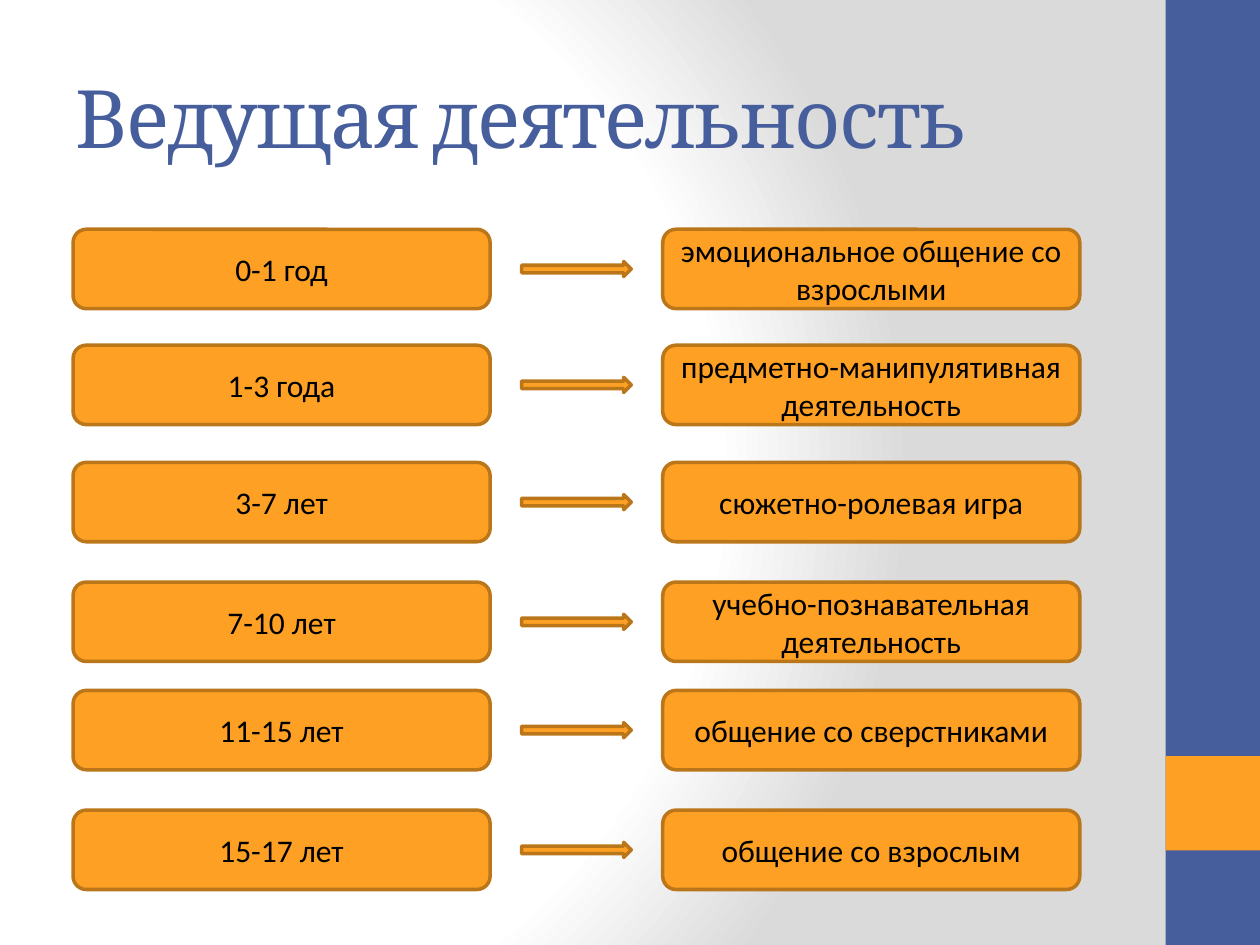
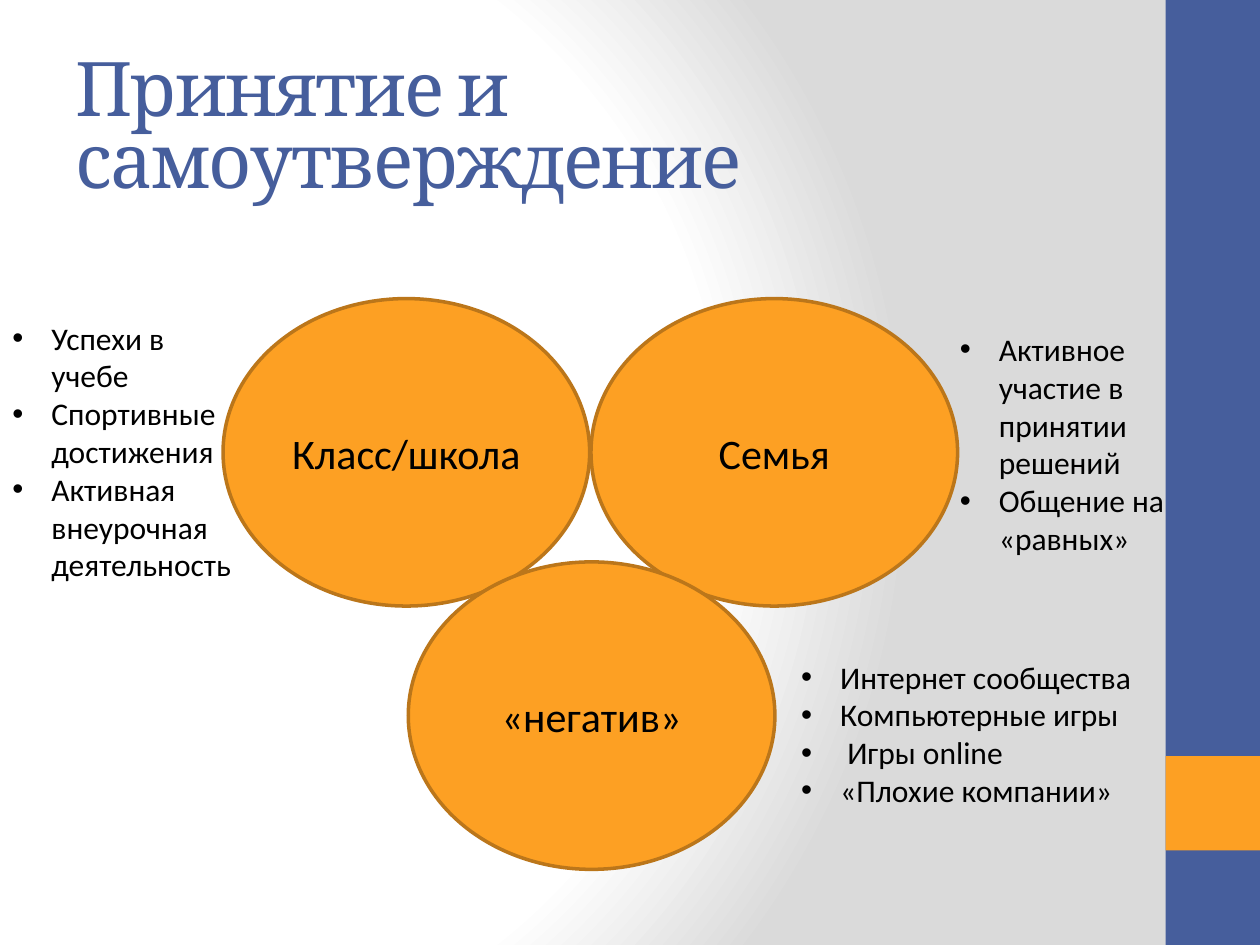
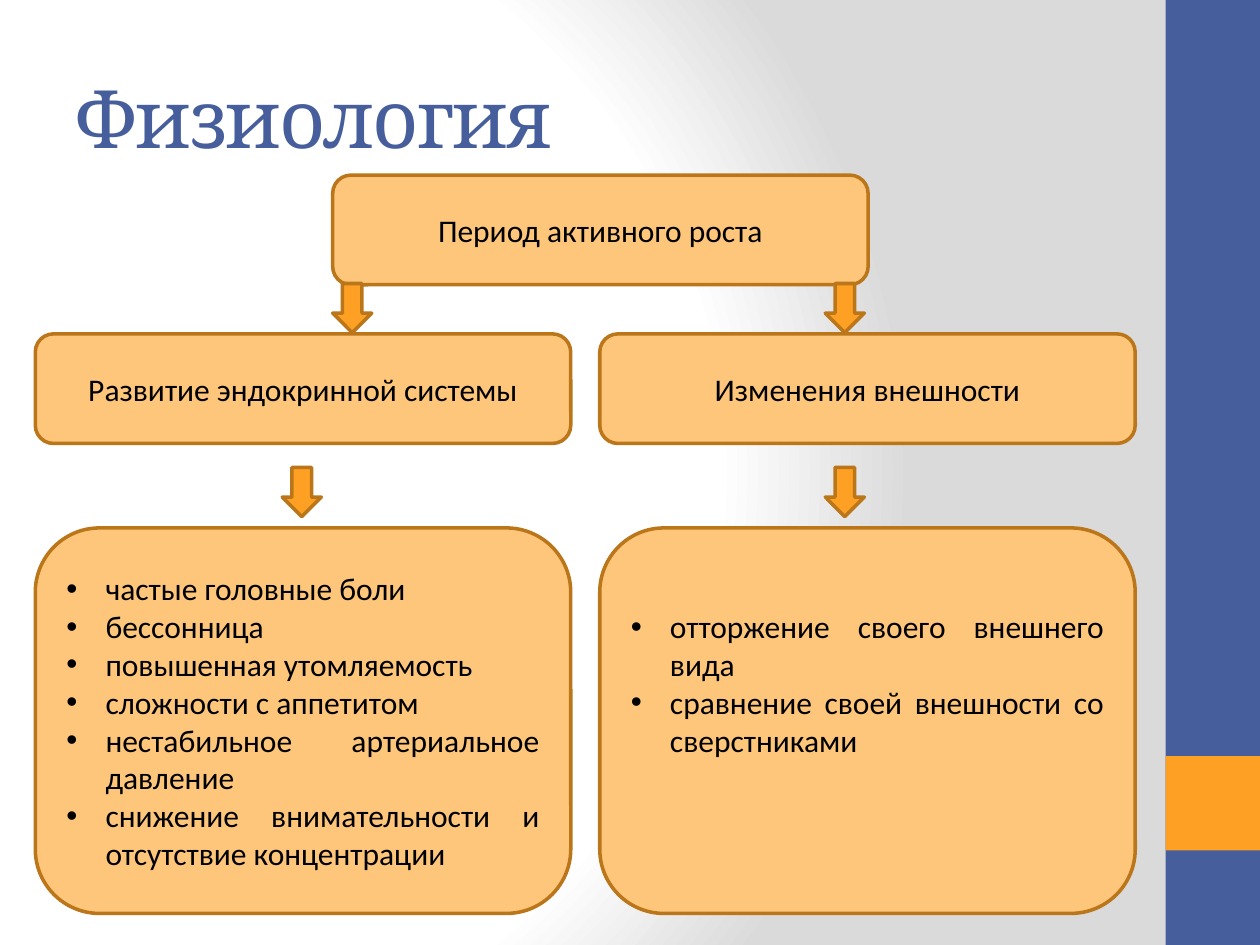
from lxml import etree
from pptx import Presentation
from pptx.dml.color import RGBColor
from pptx.enum.shapes import MSO_SHAPE as SHAPE
from pptx.enum.text import MSO_ANCHOR as ANCHOR, MSO_AUTO_SIZE as FIT, PP_ALIGN as ALIGN
from pptx.oxml import parse_xml
from pptx.oxml.ns import nsdecls, qn
from pptx.util import Inches, Pt

# The grid has square cells of one inch.
COLS, ROWS = 10, 7.5
BLUE, ORANGE, PEACH, BROWN = "465E9C", "FDA023", "FEC67B", "BB761A"
BLACK, WHITE, GREY = "000000", "FFFFFF", "DADADA"
BAND = 0.75
INDENT = 0.31


def color(hex_code):
    return RGBColor.from_string(hex_code)


def cells(*lengths):
    return [Inches(n) for n in lengths]


def set_background(master):
    """Give every slide the white to grey circular gradient."""
    fill = master.background.fill
    fill.solid()
    solid = master.element.find(".//" + qn("p:bgPr")).find(qn("a:solidFill"))
    stops = "".join(
        f'<a:gs pos="{pos * 1000}"><a:srgbClr val="{tone}"/></a:gs>'
        for pos, tone in ((0, WHITE), (75, WHITE), (100, GREY)))
    solid.getparent().replace(solid, parse_xml(
        f'<a:gradFill {nsdecls("a")} rotWithShape="1"><a:gsLst>{stops}</a:gsLst>'
        '<a:path path="circle"><a:fillToRect l="20000" t="50000" r="100000" b="50000"/>'
        '</a:path></a:gradFill>'))


def write(tf, lines, size, font="Calibri", tone=BLACK, align=None, bullets=False):
    tf.word_wrap = True
    tf.text = "\n".join(lines)
    for p in tf.paragraphs:
        p.alignment = align
        if bullets:
            add_bullet(p)
        for r in p.runs:
            r.font.size = Pt(size)
            r.font.name = font
            r.font.color.rgb = color(tone)


def add_bullet(p):
    pPr = p._p.get_or_add_pPr()
    pPr.set("marL", str(Inches(INDENT)))
    pPr.set("indent", str(-Inches(INDENT)))
    etree.SubElement(pPr, qn("a:buFont")).set("typeface", "Arial")
    etree.SubElement(pPr, qn("a:buChar")).set("char", "•")


def add_figure(s, kind, x, y, w, h, fill=ORANGE, line=BROWN):
    sp = s.shapes.add_shape(kind, *cells(x, y, w, h))
    sp.shadow.inherit = False
    sp.fill.solid()
    sp.fill.fore_color.rgb = color(fill)
    if line:
        sp.line.color.rgb = color(line)
        sp.line.width = Pt(2)
    else:
        sp.line.fill.background()
    return sp


def add_label(s, kind, x, y, w, h, text, size=18, fill=ORANGE):
    sp = add_figure(s, kind, x, y, w, h, fill)
    sp.text_frame.vertical_anchor = ANCHOR.MIDDLE
    write(sp.text_frame, [text], size, align=ALIGN.CENTER)


def add_list(s, x, y, w, h, items):
    tf = s.shapes.add_textbox(*cells(x, y, w, h)).text_frame
    write(tf, items, 18, bullets=True)
    tf.auto_size = FIT.SHAPE_TO_FIT_TEXT


def add_list_card(s, x, y, w, h, items, lift=0):
    """Add a rounded card; lift is the room kept free below the list."""
    sp = add_figure(s, SHAPE.ROUNDED_RECTANGLE, x, y, w, h, PEACH)
    tf = sp.text_frame
    tf.vertical_anchor = ANCHOR.MIDDLE
    tf.margin_bottom = Inches(0.05 + lift)
    write(tf, items, 18, align=ALIGN.JUSTIFY, bullets=True)


def add_slide(prs, title):
    s = prs.slides.add_slide(prs.slide_layouts[6])
    add_figure(s, SHAPE.RECTANGLE, COLS - BAND, 0, BAND, ROWS, BLUE, None)
    add_figure(s, SHAPE.RECTANGLE, COLS - BAND, ROWS - 2 * BAND, BAND, BAND, ORANGE, None)
    tf = s.shapes.add_textbox(*cells(0.5, 0.3, 8.33, 1.25)).text_frame
    tf.vertical_anchor = ANCHOR.MIDDLE
    write(tf, [title], 46, "Cambria", BLUE)
    tf.auto_size = FIT.TEXT_TO_FIT_SHAPE
    for r in tf.paragraphs[0].runs:
        r.font._element.set("spc", "-100")
    return s


def leading_activity(prs):
    s = add_slide(prs, "Ведущая деятельность")
    box_w, box_h, arrow_h = 3.31, 0.63, 0.12
    stages = (
        (1.82, "0-1 год", "эмоциональное общение со взрослыми"),
        (2.74, "1-3 года", "предметно-манипулятивная деятельность"),
        (3.67, "3-7 лет", "сюжетно-ролевая игра"),
        (4.62, "7-10 лет", "учебно-познавательная деятельность"),
        (5.48, "11-15 лет", "общение со сверстниками"),
        (6.43, "15-17 лет", "общение со взрослым"),
    )
    for y, age, activity in stages:
        for x, text in ((0.58, age), (5.26, activity)):
            add_label(s, SHAPE.ROUNDED_RECTANGLE, x, y, box_w, box_h, text)
        add_figure(s, SHAPE.RIGHT_ARROW, 4.14, y + (box_h - arrow_h) / 2, 0.87, arrow_h)


def acceptance(prs):
    s = add_slide(prs, "Принятие и самоутверждение")
    for x, y, text in ((1.77, 2.37, "Класс/школа"), (4.69, 2.37, "Семья"),
                       (3.24, 4.46, "«негатив»")):
        add_label(s, SHAPE.OVAL, x, y, 2.91, 2.44, text, 24)
    add_list(s, 0, 2.48, 2.05, 2.22, [
        "Успехи в учебе", "Спортивные достижения", "Активная внеурочная деятельность"])
    add_list(s, 7.52, 2.57, 2.36, 2.22, [
        "Активное участие в принятии решений", "Общение на «равных»"])
    add_list(s, 6.26, 5.17, 2.91, 1.31, [
        "Интернет сообщества", "Компьютерные игры", " Игры online", "«Плохие компании»"])


def physiology(prs):
    s = add_slide(prs, "Физиология")
    card_w, head_h = 4.25, 0.87
    left, right = 0.28, 4.76
    heads = ((2.64, 1.39, "Период активного роста"),
             (left, 2.65, "Развитие эндокринной системы"),
             (right, 2.65, "Изменения внешности"))
    for x, y, text in heads:
        add_label(s, SHAPE.ROUNDED_RECTANGLE, x, y, card_w, head_h, text, fill=PEACH)
    for x, y in ((2.64, 2.25), (6.55, 2.25), (2.24, 3.71), (6.55, 3.71)):
        add_figure(s, SHAPE.DOWN_ARROW, x, y, 0.31, 0.39)
    add_list_card(s, left, 4.19, card_w, 3.06, [
        "частые головные боли", "бессонница", "повышенная утомляемость",
        "сложности с аппетитом", "нестабильное артериальное давление",
        "снижение внимательности и отсутствие концентрации"])
    add_list_card(s, right, 4.19, card_w, 3.06, [
        "отторжение своего внешнего вида",
        "сравнение своей внешности со сверстниками"], lift=0.6)


def main():
    prs = Presentation()
    prs.slide_width, prs.slide_height = cells(COLS, ROWS)
    set_background(prs.slide_master)
    leading_activity(prs)
    acceptance(prs)
    physiology(prs)
    prs.save("out.pptx")


if __name__ == "__main__":
    main()
